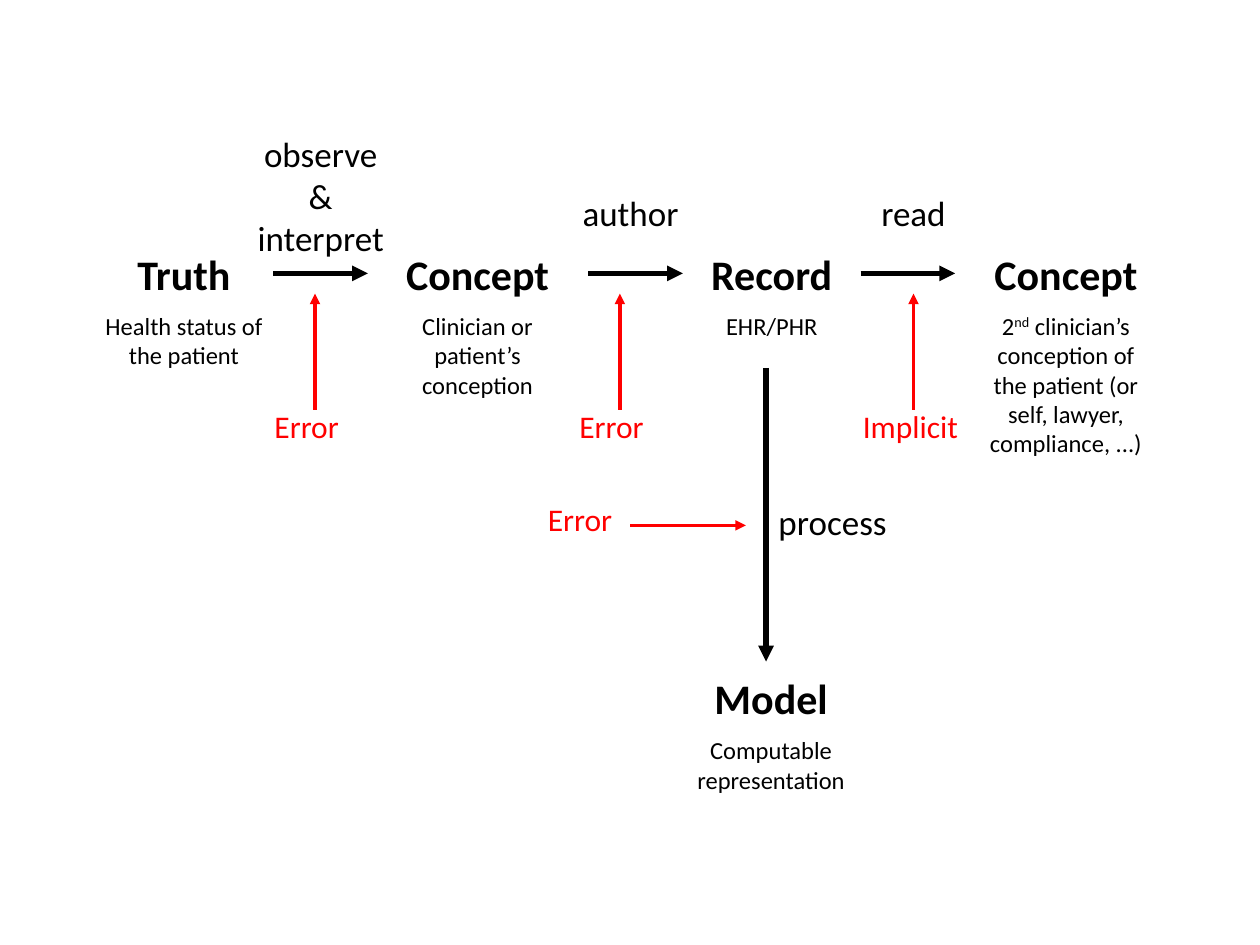
import pptx
import pptx.util
import pptx.dml.color
import pptx.enum.shapes
import pptx.enum.text
import pptx.oxml.ns
import lxml.etree

Inches, Pt = pptx.util.Inches, pptx.util.Pt
ALIGN = pptx.enum.text.PP_ALIGN
FONT = "Calibri"
COLORS = {"flow": "000000", "error": "FF0000"}


def rgb(role):
    return pptx.dml.color.RGBColor.from_string(COLORS[role])


def add_box(slide, left, top, width, height):
    frame = slide.shapes.add_textbox(
        Inches(left), Inches(top), Inches(width), Inches(height)).text_frame
    frame.word_wrap = True
    frame.auto_size = pptx.enum.text.MSO_AUTO_SIZE.SHAPE_TO_FIT_TEXT
    return frame


def add_run(paragraph, text, size, role="flow", bold=False, superscript=False):
    run = paragraph.add_run()
    run.text = text
    run.font.name = FONT
    run.font.size = Pt(size)
    run.font.bold = bold
    run.font.color.rgb = rgb(role)
    if superscript:
        run.font._element.set("baseline", "30000")


def add_label(slide, text, box, size=20, role="flow", align=ALIGN.CENTER):
    paragraph = add_box(slide, *box).paragraphs[0]
    paragraph.alignment = align
    add_run(paragraph, text, size, role)


def add_stage(slide, name, description, box):
    """Bold stage name above its description, given as (text, superscript) pieces."""
    frame = add_box(slide, *box)
    heading = frame.paragraphs[0]
    heading.alignment = ALIGN.CENTER
    add_run(heading, name, 24, bold=True)
    detail = frame.add_paragraph()
    detail.alignment = ALIGN.CENTER
    detail.space_before = Pt(7)
    for text, superscript in description:
        add_run(detail, text, 14, superscript=superscript)


def add_arrow(slide, start, end, role="flow", width=3):
    arrow = slide.shapes.add_connector(
        pptx.enum.shapes.MSO_CONNECTOR.STRAIGHT,
        *(Inches(value) for value in (*start, *end)))
    arrow.line.color.rgb = rgb(role)
    arrow.line.width = Pt(width)
    qn = pptx.oxml.ns.qn
    lxml.etree.SubElement(arrow.line._get_or_add_ln(), qn("a:tailEnd"), type="triangle")
    lxml.etree.SubElement(arrow._element.spPr, qn("a:effectLst"))


def main():
    deck = pptx.Presentation()
    deck.slide_width, deck.slide_height = Inches(10), Inches(7.5)
    slide = deck.slides.add_slide(deck.slide_layouts[6])

    # Stages of the information
    stage_top = 1.92
    for name, description, box in (
        ("Truth", [("Health status of the patient", False)],
         (0.67, stage_top, 1.58, 1.08)),
        ("Concept", [("Clinician or patient’s conception", False)],
         (3, stage_top, 1.58, 1.33)),
        ("Record", [("EHR/PHR", False)], (5.25, stage_top, 1.75, 0.85)),
        ("Concept",
         [("2", False), ("nd", True),
          (" clinician’s conception of the patient "
           "(or self, lawyer, compliance, ...)", False)],
         (7.67, stage_top, 1.58, 1.78)),
        ("Model", [("Computable representation", False)],
         (5.08, 5.29, 2.08, 1.08)),
    ):
        add_stage(slide, name, description, box)

    # Steps between the stages
    for step, box, arrow_left in (
        ("observe & interpret", (1.92, 1, 1.25, 1.1), 2.17),
        ("author", (4.42, 1.47, 1.17, 0.43), 4.67),
        ("read", (6.75, 1.47, 1, 0.43), 6.83),
    ):
        add_label(slide, step, box)
        add_arrow(slide, (arrow_left, 2.17), (arrow_left + 0.75, 2.17))
    add_label(slide, "process", (6.08, 3.92, 1.25, 0.43), align=ALIGN.LEFT)
    add_arrow(slide, (6.08, 2.92), (6.08, 5.25))

    # Sources of error pointing at each step
    for source, left, top, start, end in (
        ("Error", 2.08, 3.18, (2.5, 3.25), (2.5, 2.33)),
        ("Error", 4.5, 3.18, (4.92, 3.25), (4.92, 2.33)),
        ("Implicit", 6.75, 3.18, (7.25, 3.25), (7.25, 2.33)),
        ("Error", 4.25, 3.92, (5, 4.17), (5.92, 4.17)),
    ):
        add_arrow(slide, start, end, "error", 2)
        add_label(slide, source, (left, top, 1, 0.4), 18, "error", ALIGN.LEFT)

    deck.save("out.pptx")


if __name__ == "__main__":
    main()
